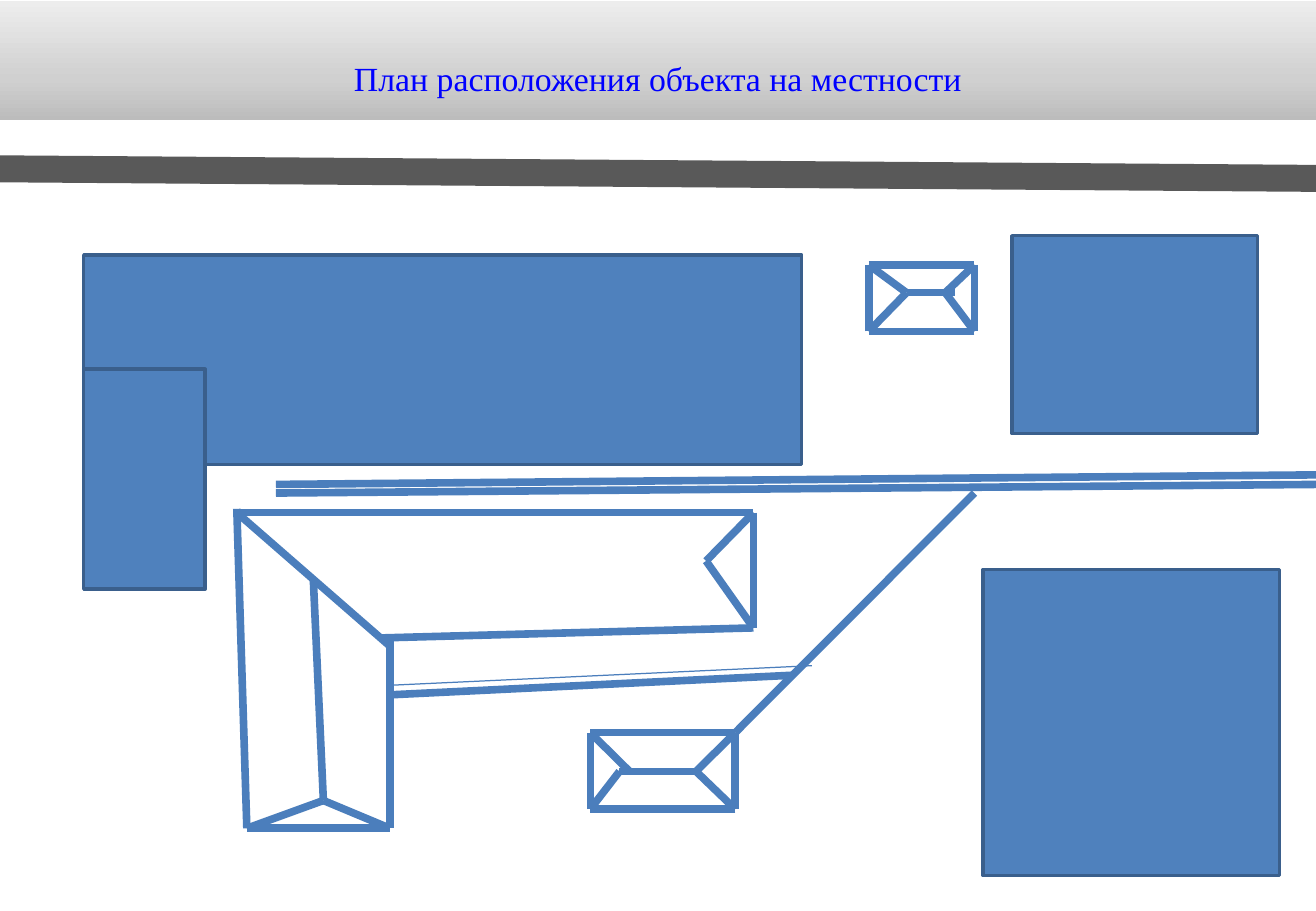
from copy import deepcopy

from lxml import etree
from pptx import Presentation
from pptx import util as u
from pptx.dml.color import RGBColor
from pptx.enum import shapes, text
from pptx.oxml.ns import qn

# Content: all lengths in cm, line widths in points
WIDTH, HEIGHT = 27.51, 19.05
TITLE = "План расположения объекта на местности"
TITLE_BOX = (0, 0.03, WIDTH, 2.49)
TITLE_GRADIENT = [(0, "BCBCBC"), (0.35, "D0D0D0"), (1, "EDEDED")]
BLUE, EDGE, PLAN, ROAD = "4F81BD", "3A5F8C", "4B7EBC", "595959"
THICK, THIN = 4.5, 0.75

BLOCKS = [  # left, top, width, height
    (1.75, 5.33, 15.01, 4.39),
    (1.75, 7.72, 2.54, 4.6),
    (20.55, 11.91, 6.2, 6.4),
    (21.16, 4.93, 5.13, 4.14),
]

# Corners of the L-shaped building
NW, NE, SE = (4.95, 10.72), (15.75, 10.72), (15.75, 13.13)
WING_SW, WING_SE = (5.16, 17.32), (8.15, 17.32)
EAST_HIP, SOUTH_HIP = (14.76, 11.73), (6.76, 16.74)
L_BUILDING = [
    (NW, NE), (NE, SE), ((7.95, 13.34), SE),
    ((4.95, 10.64), WING_SW), (WING_SW, WING_SE), ((8.15, 13.34), WING_SE),
    (NW, (8.15, 13.51)), (NE, EAST_HIP), (SE, EAST_HIP),
    ((6.55, 12.12), SOUTH_HIP), (WING_SW, SOUTH_HIP), (WING_SE, SOUTH_HIP),
]

SMALL_HOUSES = [  # walls, ridge (x1, x2, y), hip ends x (NW, SW, east)
    ((18.16, 5.54, 20.37, 6.93), (18.95, 19.96, 6.12), (18.95, 18.95, 19.76)),
    ((12.34, 15.32, 15.37, 16.92), (12.95, 14.55, 16.13), (13.16, 12.95, 14.55)),
]

PATHS = [  # start, end, width
    ((WIDTH, 9.93), (5.77, 10.13), THICK),
    ((WIDTH, 10.13), (5.77, 10.31), THICK),
    ((16.97, 13.92), (8.15, 14.33), THIN),
    ((16.56, 14.12), (8.15, 14.53), THICK),
    ((15.37, 15.32), (20.37, 10.31), THICK),
]


def rgb(value):
    return RGBColor.from_string(value)


def add_line(start, end, width=THICK, color=PLAN):
    points = [u.Cm(v) for v in (*start, *end)]
    c = slide.shapes.add_connector(shapes.MSO_CONNECTOR.STRAIGHT, *points)
    c.line.width = u.Pt(width)
    c.line.color.rgb = rgb(color)
    etree.SubElement(c._element.spPr, qn("a:effectLst"))


def add_block(box):
    sp = slide.shapes.add_shape(shapes.MSO_SHAPE.RECTANGLE, *map(u.Cm, box))
    sp.shadow.inherit = False
    sp.fill.solid()
    sp.fill.fore_color.rgb = rgb(BLUE)
    sp.line.color.rgb = rgb(EDGE)
    sp.line.width = u.Pt(2)


def add_small_house(walls, ridge, hips):
    left, top, right, bottom = walls
    ridge_left, ridge_right, y = ridge
    nw, sw, east = hips
    corners = [(left, top), (right, top), (right, bottom), (left, bottom)]
    ends = [(nw, y), (east, y), (east, y), (sw, y)]
    for i, corner in enumerate(corners):
        add_line(corner, corners[(i + 1) % 4])
        add_line(corner, ends[i])
    add_line((ridge_left, y), (ridge_right, y))


prs = Presentation()
prs.slide_width, prs.slide_height = u.Cm(WIDTH), u.Cm(HEIGHT)
slide = prs.slides.add_slide(prs.slide_layouts[5])

# Title band
title = slide.shapes.title
title.left, title.top, title.width, title.height = map(u.Cm, TITLE_BOX)
title.fill.gradient()
title.fill.gradient_angle = 90
stop_list = title._element.spPr.find(qn("a:gradFill")).find(qn("a:gsLst"))
stop_list.append(deepcopy(stop_list[0]))
for stop, (position, color) in zip(title.fill.gradient_stops, TITLE_GRADIENT):
    stop.position = position
    stop.color.rgb = rgb(color)
tf = title.text_frame
tf.word_wrap = True
tf.vertical_anchor = text.MSO_ANCHOR.MIDDLE
tf.margin_top = u.Cm(0.84)
p = tf.paragraphs[0]
p.alignment = text.PP_ALIGN.CENTER
r = p.add_run()
r.text = TITLE
r.font.name, r.font.size = "Times New Roman", u.Pt(20)
r.font.color.rgb = rgb("0000FF")

# Main road
add_line((0, 3.53), (WIDTH, 3.73), 16, ROAD)

# Solid buildings
for block in BLOCKS:
    add_block(block)

# Buildings drawn by their roof lines
for start, end in L_BUILDING:
    add_line(start, end)
for house in SMALL_HOUSES:
    add_small_house(*house)

# Driveways and paths
for path_line in PATHS:
    add_line(*path_line)

prs.save("out.pptx")
